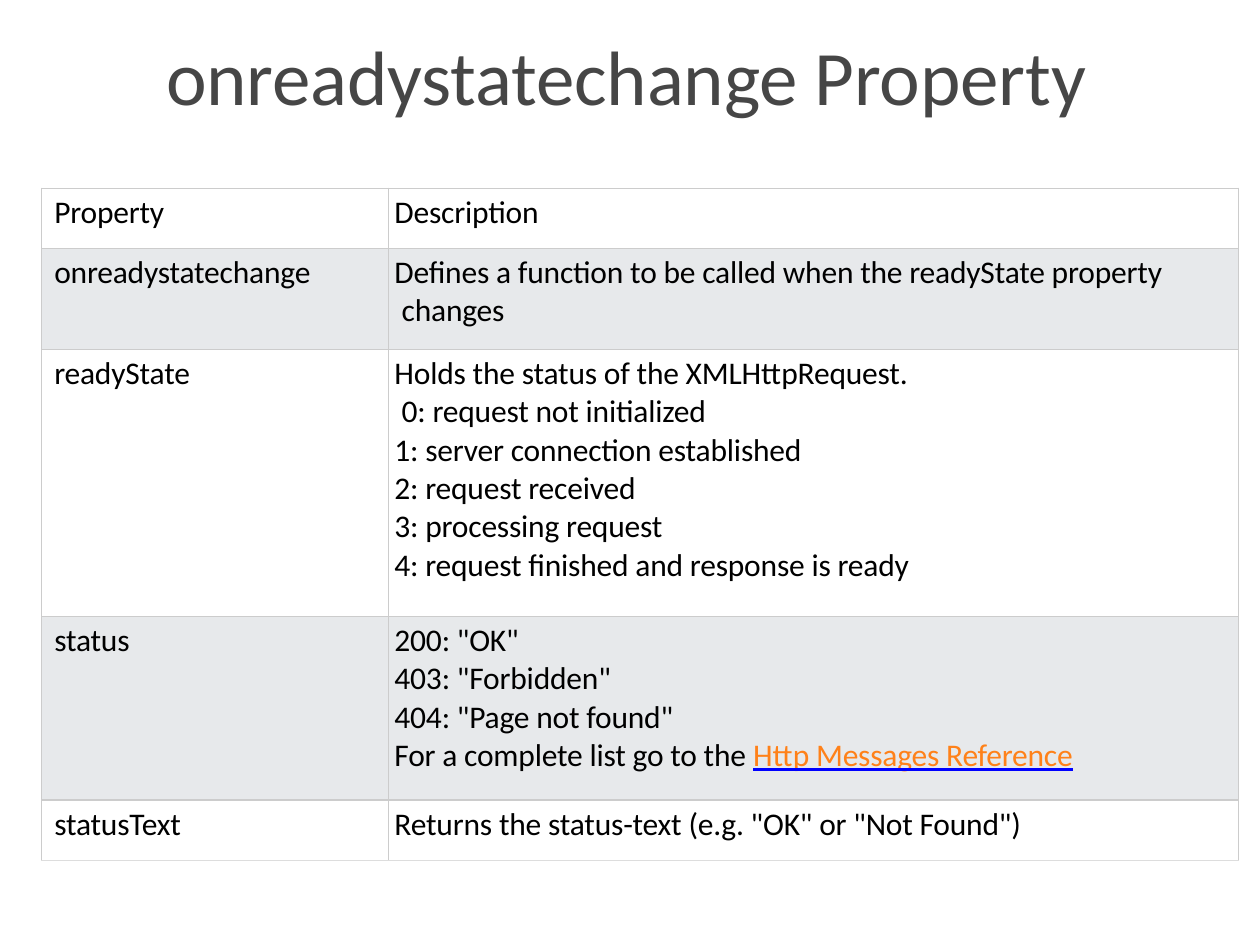
from lxml.etree import SubElement
from pptx import Presentation
from pptx.dml.color import RGBColor
from pptx.enum.text import MSO_ANCHOR
from pptx.oxml.ns import qn
from pptx.util import Pt

TITLE_GRAY = RGBColor(0x46, 0x46, 0x46)
BLACK = RGBColor(0x00, 0x00, 0x00)
BAND_GRAY = RGBColor(0xE7, 0xE9, 0xEB)
BORDER_GRAY = RGBColor(0xCC, 0xCC, 0xCC)
BOTTOM_GRAY = RGBColor(0xDD, 0xDD, 0xDD)
LINK_ORANGE = RGBColor(0xFF, 0x81, 0x19)
LINK_BLUE = RGBColor(0x00, 0x00, 0xFF)

PROPERTY_INDENT = 7.2
DESCRIPTION_INDENT = 3.6
EXTRA_INDENT = 4.1
LINK_TEXT = "Http Messages Reference"

ROWS = [
    (34.4, "Property", ["Description"]),
    (57.6, "onreadystatechange",
     ["Defines a function to be called when the readyState property changes"]),
    (152.6, "readyState",
     ["Holds the status of the XMLHttpRequest.",
      "0: request not initialized",
      "1: server connection established",
      "2: request received",
      "3: processing request",
      "4: request finished and response is ready"]),
    (105.1, "status",
     ['200: "OK"', '403: "Forbidden"', '404: "Page not found"',
      "For a complete list go to the " + LINK_TEXT]),
    (34.4, "statusText", ['Returns the status-text (e.g. "OK" or "Not Found")']),
]


def add_text(paragraph, text, size, color):
    """Write one run in the slide's font, slightly condensed."""
    paragraph.font.name = "Calibri"
    paragraph.font.size = Pt(size)
    run = paragraph.add_run()
    run.text = text
    run.font.name = "Calibri"
    run.font.size = Pt(size)
    run.font.color.rgb = color
    run.font._element.set("spc", "-10")
    return run


def add_border(cell, side, color):
    """Draw one edge of a table cell."""
    line = SubElement(cell._tc.get_or_add_tcPr(), qn(f"a:ln{side}"), w=str(Pt(0.75)))
    fill = SubElement(line, qn("a:solidFill"))
    SubElement(fill, qn("a:srgbClr"), val=str(color))


presentation = Presentation()
presentation.slide_width = Pt(720)
presentation.slide_height = Pt(540)
slide = presentation.slides.add_slide(presentation.slide_layouts[6])

# Title
title = slide.shapes.add_textbox(Pt(95), Pt(15.1), Pt(531), Pt(54.7))
frame = title.text_frame
frame.word_wrap = True
frame.vertical_anchor = MSO_ANCHOR.MIDDLE
frame.margin_left = frame.margin_right = frame.margin_bottom = 0
frame.margin_top = Pt(0.9)
add_text(frame.paragraphs[0], "onreadystatechange Property", 44, TITLE_GRAY)

# Property table
table = slide.shapes.add_table(
    len(ROWS), 2, Pt(23.8), Pt(107.5), Pt(684), Pt(384.1)).table
table.first_row = False
table.horz_banding = False
table.columns[0].width = Pt(198)
table.columns[1].width = Pt(486)

for row_index, (height, name, description) in enumerate(ROWS):
    table.rows[row_index].height = Pt(height)
    columns = [(PROPERTY_INDENT, [name]), (DESCRIPTION_INDENT, description)]
    for column_index, (indent, lines) in enumerate(columns):
        cell = table.cell(row_index, column_index)
        cell.margin_left = cell.margin_right = cell.margin_bottom = 0
        cell.margin_top = Pt(2.9)

        # Borders and banding
        bottom = BOTTOM_GRAY if row_index == len(ROWS) - 1 else BORDER_GRAY
        for side, color in zip("LRTB", [BORDER_GRAY] * 3 + [bottom]):
            add_border(cell, side, color)
        if row_index % 2:
            cell.fill.solid()
            cell.fill.fore_color.rgb = BAND_GRAY
        else:
            cell.fill.background()

        # Text; wrapped lines and the "0:" line sit slightly further in
        for line_index, text in enumerate(lines):
            frame = cell.text_frame
            paragraph = frame.add_paragraph() if line_index else frame.paragraphs[0]
            properties = paragraph._p.get_or_add_pPr()
            properties.set("marL", str(Pt(indent + EXTRA_INDENT)))
            hanging = 0 if text.startswith("0:") else -EXTRA_INDENT
            properties.set("indent", str(Pt(hanging)))
            plain, link, _ = text.partition(LINK_TEXT)
            add_text(paragraph, plain, 18, BLACK)
            if link:
                run = add_text(paragraph, link, 18, LINK_ORANGE)
                run.font.underline = True
                underline = run.font._element.makeelement(qn("a:uFill"))
                run.font._element.find(qn("a:latin")).addprevious(underline)
                fill = SubElement(underline, qn("a:solidFill"))
                SubElement(fill, qn("a:srgbClr"), val=str(LINK_BLUE))

presentation.save("out.pptx")
